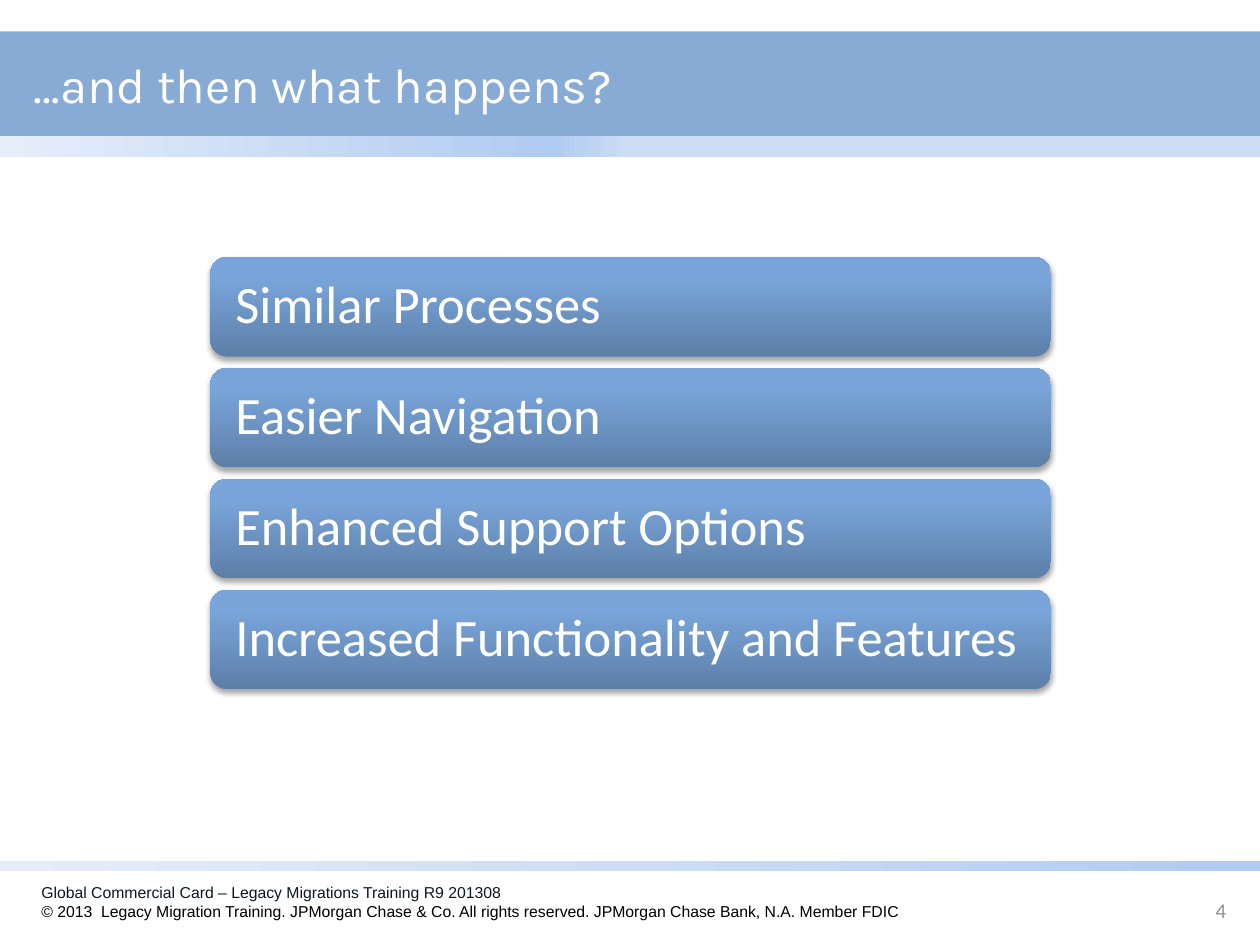
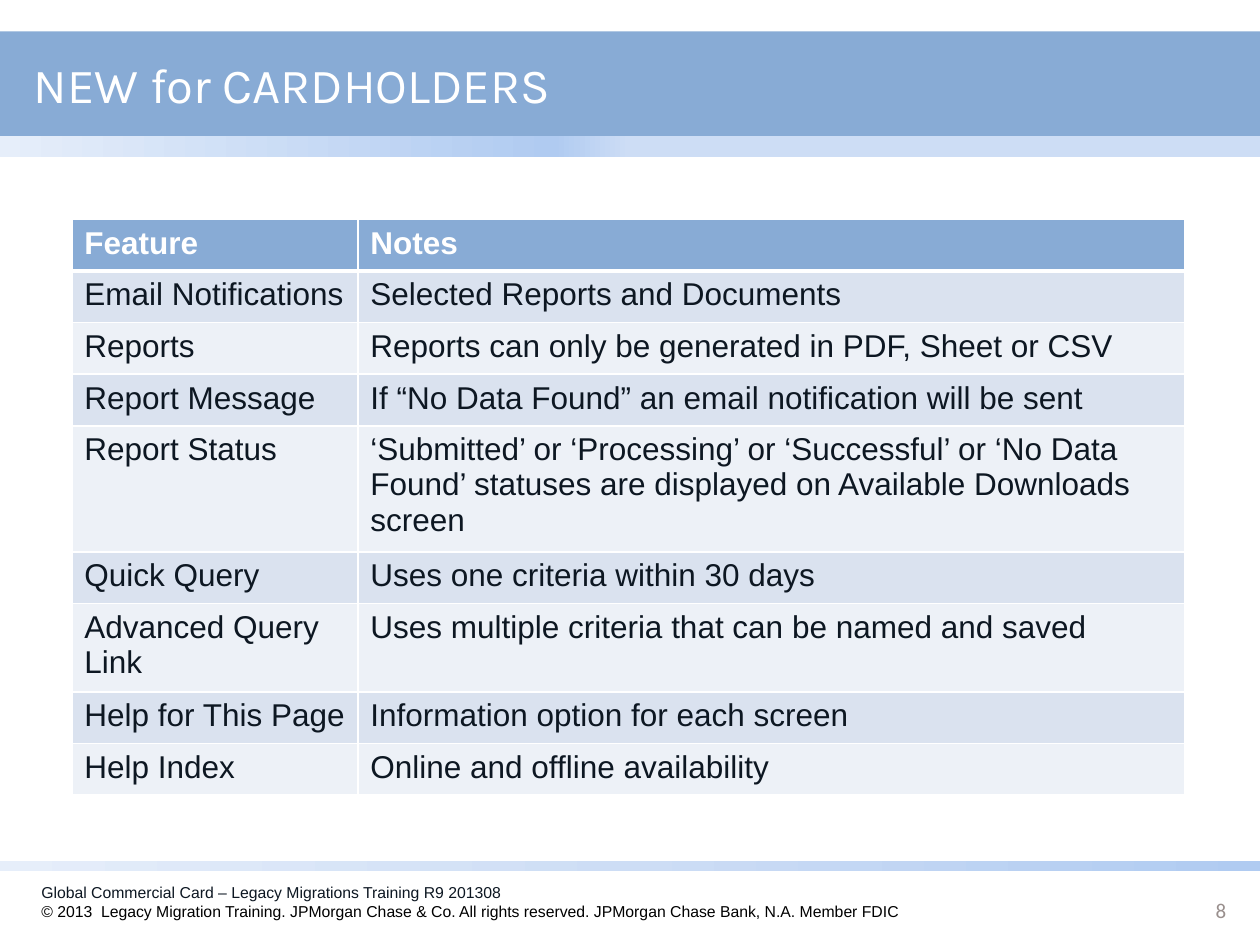
"""Builds two training slides that share title bands and a footer."""
from lxml import etree
from pptx import Presentation
from pptx import util as u
from pptx.dml.color import RGBColor
from pptx.enum import shapes, text
from pptx.oxml import ns

WHITE, BLACK, INK, GREY = "FFFFFF", "000000", "0D1722", "998F8D"
BAND_BLUE, MIST, SKY, PALE = "88ABD5", "E6EEFA", "B0CBF1", "CDDDF5"
ROW_FILLS = ("DAE2EF", "EDF1F7")
TITLE_STRIPE = ((0, MIST), (44, SKY), (50, PALE), (100, PALE))
FOOTER_STRIPE = ((0, MIST), (50, PALE), (100, SKY))
BAR_STOPS = ((0, "5D7FA8"), (80, "79A5DA"), (100, "77A5DC"))
FOOTER = (
    ("Global Commercial Card – Legacy Migrations Training R9 201308", INK),
    ("© 2013  Legacy Migration Training. JPMorgan Chase & Co. All rights reserved. "
     "JPMorgan Chase Bank, N.A. Member FDIC", BLACK),
)
BENEFITS = ("Similar Processes", "Easier Navigation", "Enhanced Support Options",
            "Increased Functionality and Features")
FEATURES = (
    ("Feature", "Notes"),
    ("Email Notifications", "Selected Reports and Documents"),
    ("Reports", "Reports can only be generated in PDF, Sheet or CSV"),
    ("Report Message", "If “No Data Found” an email notification will be sent"),
    ("Report Status", "‘Submitted’ or ‘Processing’ or ‘Successful’ or ‘No Data Found’ "
                      "statuses are displayed on Available Downloads screen"),
    ("Quick Query", "Uses one criteria within 30 days"),
    ("Advanced Query Link", "Uses multiple criteria that can be named and saved"),
    ("Help for This Page", "Information option for each screen"),
    ("Help Index", "Online and offline availability"),
)


def paint(color_format, color):
    """Set a colour from a hex string."""
    color_format.rgb = RGBColor.from_string(color)


def fill_solid(fill, color):
    """Give a fill one plain colour."""
    fill.solid()
    paint(fill.fore_color, color)


def add_child(parent, tag, **attributes):
    """Append a DrawingML element and return it."""
    names = {name: str(value) for name, value in attributes.items()}
    return etree.SubElement(parent, ns.qn(tag), names)


def fill_gradient(shape, stops, angle=0):
    """Give a shape a linear gradient of (percent, colour) stops."""
    shape.fill.gradient()
    shape.fill.gradient_angle = angle
    stop_list = shape._element.spPr.find(".//" + ns.qn("a:gsLst"))
    for stop in list(stop_list):
        stop_list.remove(stop)
    for percent, color in stops:
        stop = add_child(stop_list, "a:gs", pos=percent * 1000)
        add_child(stop, "a:srgbClr", val=color)


def add_block(page, kind, left, top, width, height):
    """Add a preset shape without outline or shadow."""
    block = page.shapes.add_shape(kind, *map(u.Inches, (left, top, width, height)))
    block.shadow.inherit = False
    block.line.fill.background()
    return block


def add_span(para, words, size, font, color, bold=False):
    """Add one styled run to a paragraph."""
    span = para.add_run()
    span.text = words
    span.font.size, span.font.name, span.font.bold = u.Pt(size), font, bold
    paint(span.font.color, color)


def add_text(page, place, lines, size, font, anchor=text.MSO_ANCHOR.MIDDLE,
             align=text.PP_ALIGN.LEFT):
    """Add a text box with one paragraph per (words, colour) line."""
    frame = page.shapes.add_textbox(*map(u.Inches, place)).text_frame
    frame.word_wrap = True
    frame.vertical_anchor = anchor
    for index, (words, color) in enumerate(lines):
        para = frame.add_paragraph() if index else frame.paragraphs[0]
        para.alignment = align
        add_span(para, words, size, font, color)


def add_page(deck, title, number):
    """Add a slide with its bands, footer, title and page number."""
    page = deck.slides.add_slide(deck.slide_layouts[6])
    rectangle = shapes.MSO_SHAPE.RECTANGLE
    fill_solid(add_block(page, rectangle, 0, 0.25, 10, 0.83).fill, BAND_BLUE)
    fill_gradient(add_block(page, rectangle, 0, 1.08, 10, 0.17), TITLE_STRIPE)
    fill_gradient(add_block(page, rectangle, 0, 6.83, 10, 0.08), FOOTER_STRIPE)
    add_text(page, (0.23, 6.96, 7.14, 0.4), FOOTER, 9, "Arial", text.MSO_ANCHOR.TOP)
    add_text(page, (0.17, 0.25, 9, 0.83), [(title, WHITE)], 28, "Karla")
    add_text(page, (7.5, 7.02, 2.33, 0.4), [(str(number), GREY)], 12, "Calibri",
             align=text.PP_ALIGN.RIGHT)
    return page


def add_soft_shadow(shape):
    """Put a soft shadow below a shape."""
    effects = shape._element.spPr.find(ns.qn("a:effectLst"))
    shadow = add_child(effects, "a:outerShdw", blurRad=u.Pt(3.1), dist=u.Pt(1.8),
                       dir=5400000, rotWithShape=0)
    add_child(add_child(shadow, "a:srgbClr", val=BLACK), "a:alpha", val=35000)


def add_benefit_bar(page, top, words):
    """Add a rounded gradient bar with its label."""
    bar = add_block(page, shapes.MSO_SHAPE.ROUNDED_RECTANGLE, 1.67, top, 6.67, 0.79)
    fill_gradient(bar, BAR_STOPS, angle=90)
    add_soft_shadow(bar)
    frame = bar.text_frame
    frame.word_wrap = True
    frame.vertical_anchor = text.MSO_ANCHOR.MIDDLE
    frame.margin_left = frame.margin_right = u.Inches(0.16)
    para = frame.paragraphs[0]
    para.alignment = text.PP_ALIGN.LEFT
    para.line_spacing = 0.9
    add_span(para, words, 30, "Calibri", WHITE)


def set_borders(cell, top, bottom):
    """Draw white cell borders, with top and bottom widths in points."""
    properties = cell._tc.get_or_add_tcPr()
    for side, width in (("L", 1), ("R", 1), ("T", top), ("B", bottom)):
        line = add_child(properties, "a:ln" + side, w=u.Pt(width))
        add_child(add_child(line, "a:solidFill"), "a:srgbClr", val=WHITE)


def add_feature_table(page, rows):
    """Add the feature table with a header and alternating rows."""
    place = map(u.Inches, (0.57, 1.74, 8.83, 0.41 * len(rows)))
    table = page.shapes.add_table(len(rows), 2, *place).table
    for column, width in zip(table.columns, (2.27, 6.56)):
        column.width = u.Inches(width)
    for index, row in enumerate(rows):
        table.rows[index].height = u.Inches(0.41)
        header = index == 0
        fill = BAND_BLUE if header else ROW_FILLS[(index - 1) % 2]
        for column, words in enumerate(row):
            cell = table.cell(index, column)
            set_borders(cell, 3 if index == 1 else 1, 3 if header else 1)
            fill_solid(cell.fill, fill)
            add_span(cell.text_frame.paragraphs[0], words, 18, "Arial",
                     WHITE if header else INK, header)


def main():
    """Build and save the deck."""
    deck = Presentation()
    deck.slide_width, deck.slide_height = u.Inches(10), u.Inches(7.5)
    page = add_page(deck, "…and then what happens?", 4)
    for index, words in enumerate(BENEFITS):
        add_benefit_bar(page, 2.04 + 0.88 * index, words)
    page = add_page(deck, "NEW for CARDHOLDERS", 8)
    add_feature_table(page, FEATURES)
    deck.save("out.pptx")


if __name__ == "__main__":
    main()
